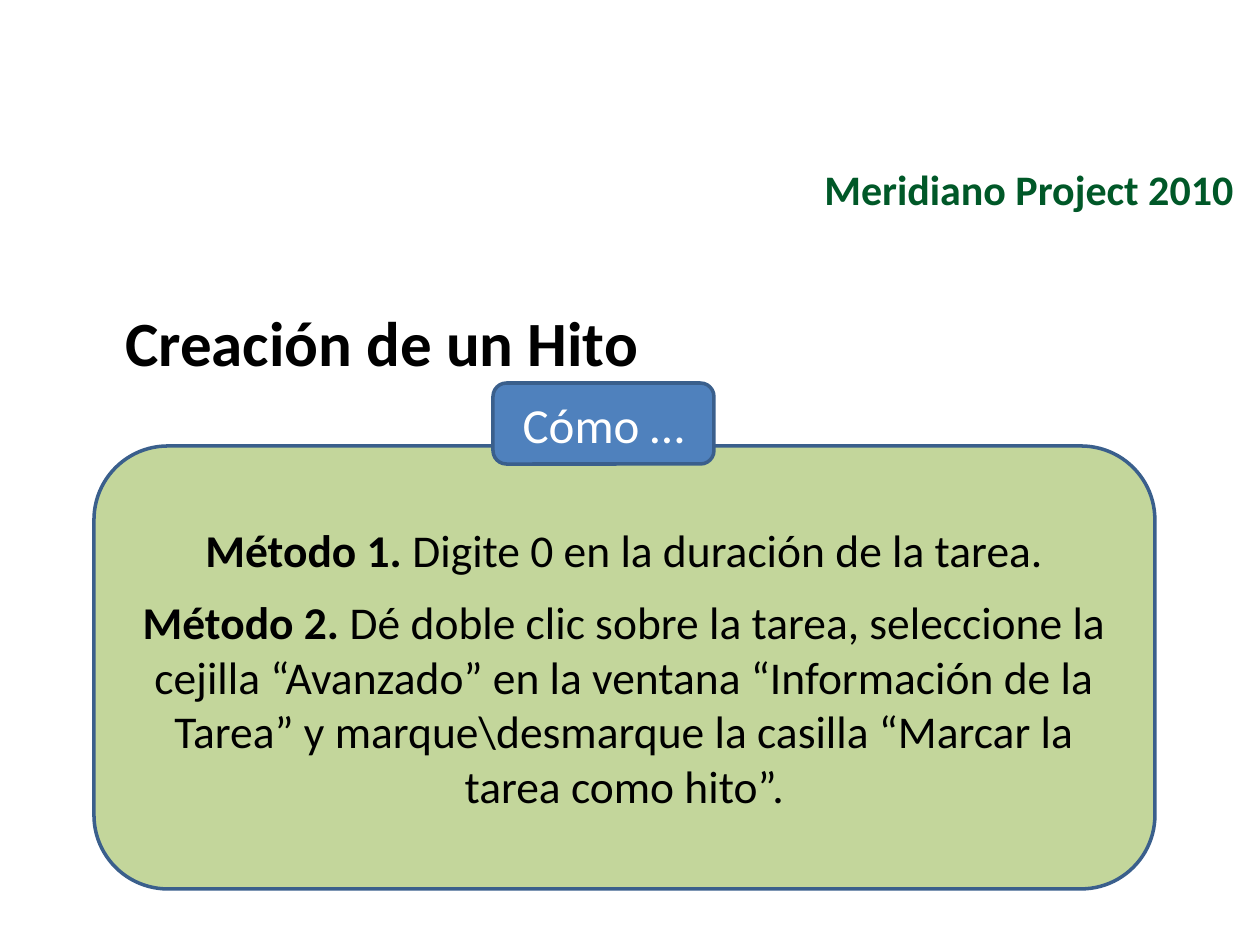
from pptx import Presentation, util as u
from pptx.dml.color import RGBColor
from pptx.enum import shapes, text

PX = 914400 // 126
EDGE = "3A5F8C"


def px(n):
    return u.Emu(n * PX)


def hue(code):
    return RGBColor.from_string(code)


def style(para, size, code, bold=False, align=text.PP_ALIGN.LEFT):
    para.alignment = align
    for run in para.runs:
        font = run.font
        font.name, font.size, font.bold = "Calibri", u.Pt(size), bold
        font.color.rgb = hue(code)


def label(slide, box, words, size, code, align, anchor):
    frame = slide.shapes.add_textbox(*map(px, box)).text_frame
    frame.word_wrap = True
    frame.vertical_anchor = anchor
    frame.text = words
    style(frame.paragraphs[0], size, code, True, align)
    return frame


def panel(slide, box, fill):
    shape = slide.shapes.add_shape(shapes.MSO_SHAPE.ROUNDED_RECTANGLE, *map(px, box))
    shape.shadow.inherit = False
    shape.fill.solid()
    shape.fill.fore_color.rgb = hue(fill)
    shape.line.color.rgb = hue(EDGE)
    shape.line.width = u.Pt(2)
    frame = shape.text_frame
    frame.word_wrap = True
    frame.vertical_anchor = text.MSO_ANCHOR.MIDDLE
    return frame


def header(slide, box):
    label(slide, box, "Meridiano Project 2010", 24, "005828",
          text.PP_ALIGN.RIGHT, text.MSO_ANCHOR.MIDDLE)


def title(slide, box):
    frame = label(slide, box, "Creación de un Hito", 36, "000000",
                  text.PP_ALIGN.LEFT, text.MSO_ANCHOR.TOP)
    frame.margin_left = px(75)


def guide(slide, box, steps):
    left, top, width, height = box
    frame = panel(slide, (left, top + 63, width, height - 63), "C3D69B")
    for i, (head, body) in enumerate(steps):
        para = frame.add_paragraph() if i else frame.paragraphs[0]
        para.text = head + " "
        para.add_run().text = body
        style(para, 26, "000000", align=text.PP_ALIGN.CENTER)
        para.runs[0].font.bold = True
        if i:
            para.space_before = u.Pt(10)
        else:
            para._p.get_or_add_pPr().set("indent", str(px(-40)))

    frame = panel(slide, (left + 399, top, 221, 81), "4F81BD")
    frame.text = "Cómo …"
    style(frame.paragraphs[0], 28, "FFFFFF", align=text.PP_ALIGN.CENTER)


def main():
    deck = Presentation()
    deck.slide_width, deck.slide_height = px(1260), px(945)
    slide = deck.slides.add_slide(deck.slide_layouts[6])
    title(slide, (50, 297, 1144, 80))
    guide(slide, (94, 383, 1061, 506), [
        ("Método 1.", "Digite 0 en la duración de la tarea."),
        ("Método 2.", "Dé doble clic sobre la tarea, seleccione la cejilla "
         "“Avanzado” en la ventana “Información de la Tarea” y "
         "marque\\desmarque la casilla “Marcar la tarea como hito”."),
    ])
    header(slide, (679, 145, 567, 87))
    deck.save("out.pptx")


if __name__ == "__main__":
    main()
